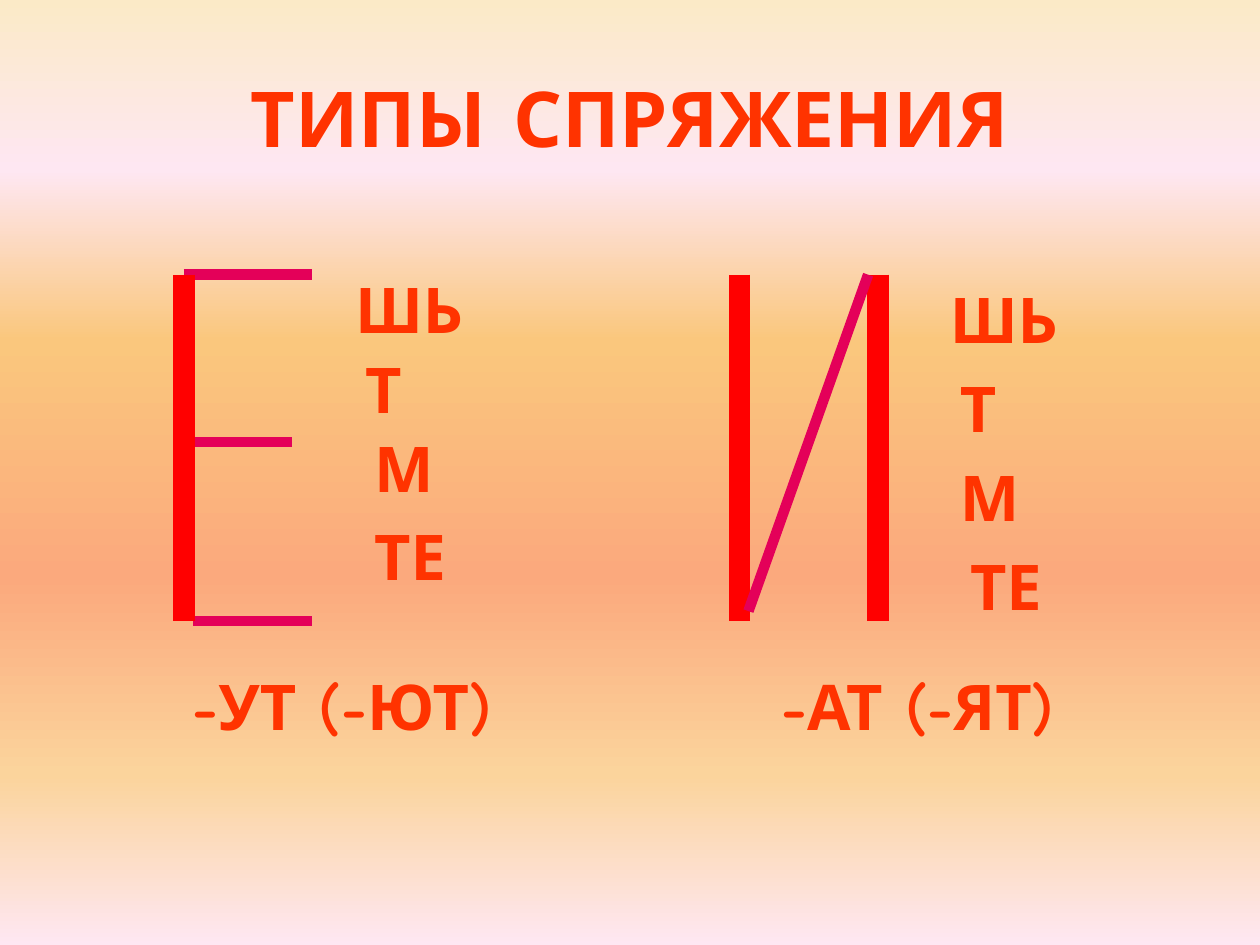
from lxml import etree
from pptx import Presentation
from pptx.dml.color import RGBColor as Color
from pptx.enum.shapes import MSO_CONNECTOR as Connector
from pptx.enum.text import MSO_ANCHOR as Anchor, PP_ALIGN as Align
from pptx.oxml.ns import qn
from pptx.util import Inches, Pt

COLORS = {"text": "FF3300", "stem": "FF0000", "bar": "E40059"}
BACKGROUND = [(0, "FBEAC7"), (18, "FEE7F2"), (36, "FAC77D"),
              (61, "FBA97D"), (82, "FBD49C"), (100, "FEE7F2")]
WIDTHS = {"stem": 12.25, "bar": 6}

deck = Presentation()
deck.slide_width, deck.slide_height = Inches(10), Inches(7.5)
page = deck.slides.add_slide(deck.slide_layouts[6])

# All lengths are percent of the slide's width (column) and height (row)
column, row = deck.slide_width / 100, deck.slide_height / 100
TOP, BOTTOM = 29.07, 65.73  # ends of the large letters


def add_text(text, left, top, width, height=9.33, size=36,
             align=Align.LEFT, anchor=Anchor.TOP):
    box = page.shapes.add_textbox(round(left * column), round(top * row),
                                  round(width * column), round(height * row))
    frame = box.text_frame
    frame.word_wrap = True
    frame.vertical_anchor = anchor
    para = frame.paragraphs[0]
    para.text = text
    para.alignment = align
    para.font.name = "Comic Neue"
    para.font.size = Pt(size)
    para.font.bold = True
    para.font.color.rgb = Color.from_string(COLORS["text"])


def add_stroke(kind, x1, y1, x2, y2):
    stroke = page.shapes.add_connector(
        Connector.STRAIGHT, round(x1 * column), round(y1 * row),
        round(x2 * column), round(y2 * row))
    stroke.line.color.rgb = Color.from_string(COLORS[kind])
    stroke.line.width = Pt(WIDTHS[kind])
    etree.SubElement(stroke._element.spPr, qn("a:effectLst"))


# Background gradient, top to bottom
fill = page.background.fill
fill.gradient()
fill.gradient_angle = 270  # counter-clockwise, so downwards
stops = page.background._cSld.find(".//" + qn("a:gsLst"))
for stop in list(stops):
    stops.remove(stop)
for position, shade in BACKGROUND:
    stop = etree.SubElement(stops, qn("a:gs"), pos=str(position * 1000))
    etree.SubElement(stop, qn("a:srgbClr"), val=shade)

# Title
add_text("ТИПЫ СПРЯЖЕНИЯ", 5, 4, 90, 16.67, 44, Align.CENTER, Anchor.MIDDLE)

# Large letter Е: three bars, then the stem over them
for start, end, height in [(14.6, 24.8, TOP), (15.3, 23.2, 46.8),
                           (15.3, 24.8, BOTTOM)]:
    add_stroke("bar", start, height, end, height)
add_stroke("stem", 14.6, TOP, 14.6, BOTTOM)

# Large letter И: two stems and the diagonal
for x in (58.7, 69.7):
    add_stroke("stem", x, TOP, x, BOTTOM)
add_stroke("bar", 68.9, TOP, 59.4, 64.67)

# Endings beside each letter
ENDINGS = ["ШЬ", "Т", "М", "ТЕ"]
PLACES = [
    [(27.2, 28), (28, 36.4), (28.7, 44.8), (28.7, 54.13)],
    [(74.4, 29.07), (75.2, 38.4), (75.2, 47.87), (76, 57.33)],
]
for places in PLACES:
    for ending, (left, top) in zip(ENDINGS, places):
        add_text(ending, left, top, 11.8)

# Plural endings below each letter
for ending, left in [("-УТ (-ЮТ)", 12.2), ("-АТ (-ЯТ)", 57.9)]:
    add_text(ending, left, 70, 29.9, align=Align.CENTER)

deck.save("out.pptx")
